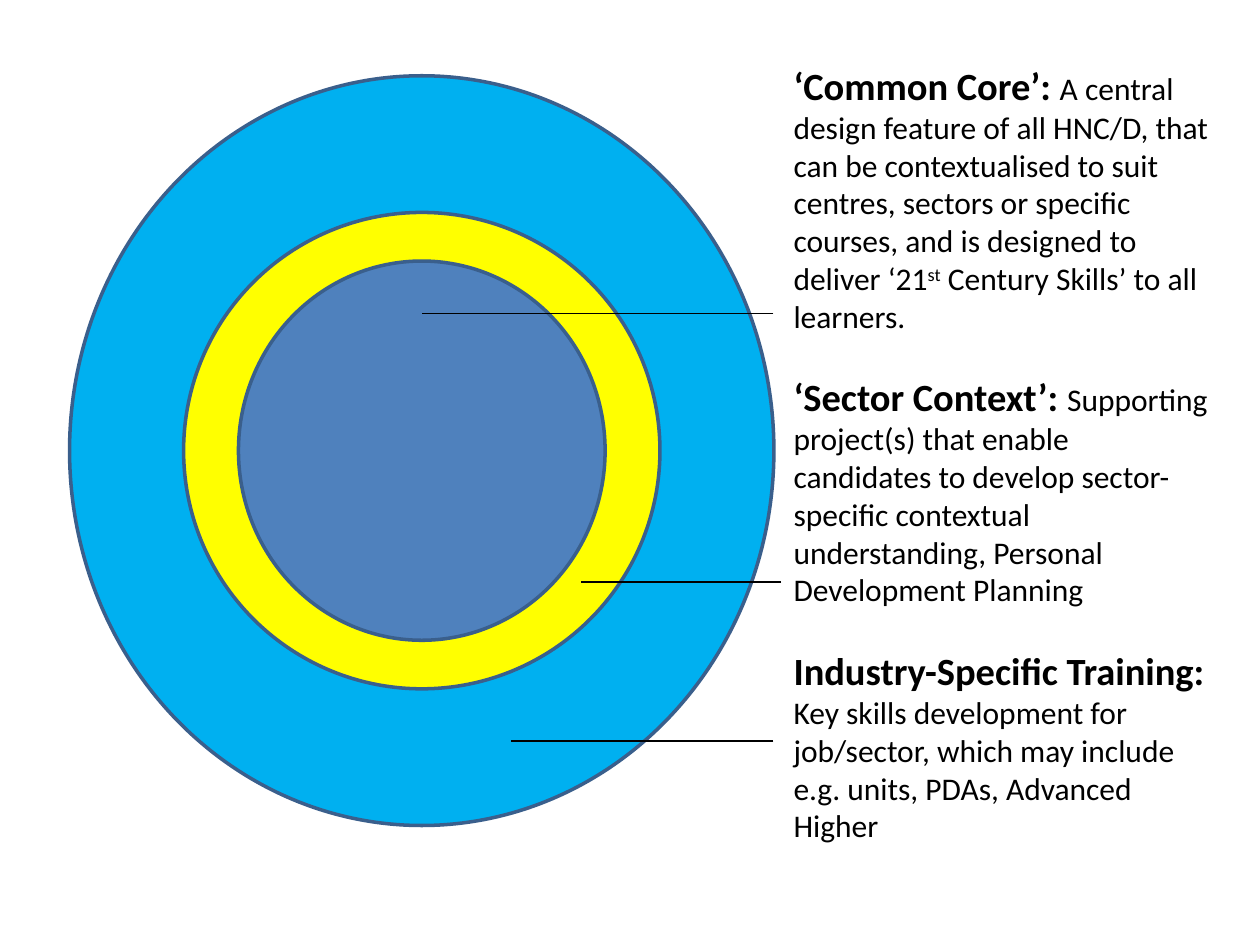
"""Build a slide of three nested rings, each explained by a note at the right."""
from pptx import Presentation
from pptx.dml.color import RGBColor
from pptx.enum.shapes import MSO_CONNECTOR, MSO_SHAPE
from pptx.enum.text import MSO_AUTO_SIZE
from pptx.oxml.ns import qn
from pptx.util import Pt
from lxml.etree import SubElement

COLORS = {"outer": "00B0F0", "middle": "FFFF00", "core": "4F81BD",
          "outline": "3A5F8C", "black": "000000"}
CENTER = (241, 257.5)
RINGS = [("outer", 402.5, 428.4), ("middle", 272.2, 272.2), ("core", 209.5, 216.7)]
POINTERS = [(442, 241, 179.3), (446.4, 332, 332.6), (442, 292.3, 423.4)]
NOTES = [
    ("‘Common Core’: ", [
        ("A central design feature of all HNC/D, that can be contextualised to suit "
         "centres, sectors or specific courses, and is designed to deliver ‘21", False),
        ("st", True),
        (" Century Skills’ to all learners.", False)]),
    ("‘Sector Context’: ", [
        ("Supporting project(s) that enable candidates to develop sector-specific "
         "contextual understanding, Personal Development Planning", False)]),
    ("Industry-Specific Training: ", [
        ("Key skills development for job/sector, which may include e.g. units, PDAs, "
         "Advanced Higher", False)]),
]


def rgb(name):
    return RGBColor.from_string(COLORS[name])


def add_text(p, text, size=18, bold=False, superscript=False):
    r = p.add_run()
    r.text = text
    r.font.name = "Calibri"
    r.font.size = Pt(size)
    r.font.bold = bold
    r.font.color.rgb = rgb("black")
    if superscript:
        r._r.get_or_add_rPr().set("baseline", "30000")


prs = Presentation()
prs.slide_width, prs.slide_height = Pt(720), Pt(540)
s = prs.slides.add_slide(prs.slide_layouts[6])

for name, w, h in RINGS:
    left, top = CENTER[0] - w / 2, CENTER[1] - h / 2
    sp = s.shapes.add_shape(MSO_SHAPE.OVAL, Pt(left), Pt(top), Pt(w), Pt(h))
    sp.shadow.inherit = False
    sp.fill.solid()
    sp.fill.fore_color.rgb = rgb(name)
    sp.line.color.rgb = rgb("outline")
    sp.line.width = Pt(2)

tf = s.shapes.add_textbox(Pt(446.4), Pt(31.7), Pt(252), Pt(472.3)).text_frame
tf.word_wrap = True
tf.auto_size = MSO_AUTO_SIZE.SHAPE_TO_FIT_TEXT
for i, (heading, parts) in enumerate(NOTES):
    p = tf.add_paragraph() if i else tf.paragraphs[0]
    if i:
        p.space_before = Pt(22)
    add_text(p, heading, size=22, bold=True)
    for text, superscript in parts:
        add_text(p, text, superscript=superscript)

for x1, x2, y in POINTERS:
    line = s.shapes.add_connector(MSO_CONNECTOR.STRAIGHT, Pt(x1), Pt(y), Pt(x2), Pt(y))
    line.line.color.rgb = rgb("black")
    line.line.width = Pt(0.75)
    SubElement(line._element.spPr, qn("a:effectLst"))

prs.save("out.pptx")
